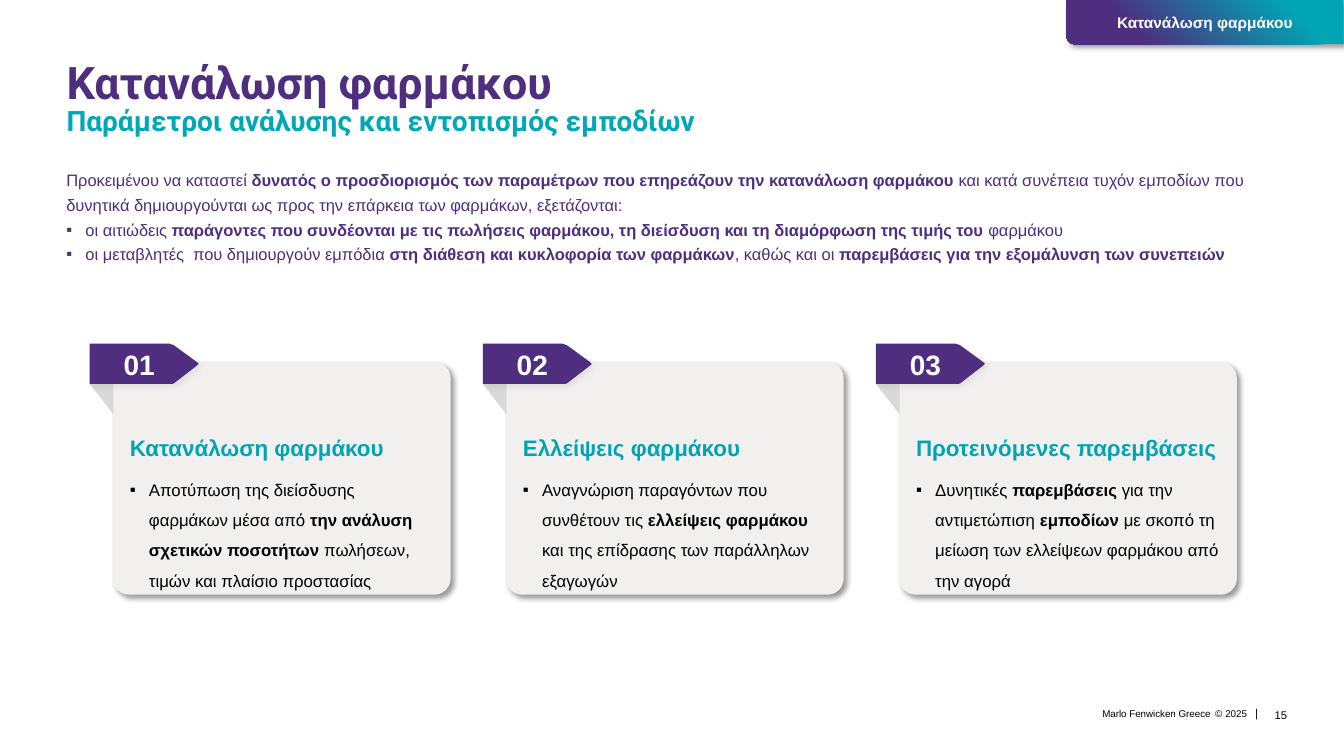
from dataclasses import dataclass
from typing import NamedTuple

from lxml import etree
from pptx import Presentation
from pptx import util as u
from pptx.dml import color
from pptx.enum import shapes, text
from pptx.oxml import ns
from pptx.shapes import autoshape
from pptx.slide import Slide
from pptx.text import text as words

CELL = u.Inches(0.1)
PURPLE, TEAL, WHITE, BLACK = "4F2D7F", "00A4B3", "FFFFFF", "000000"
LEFT, CENTER, RIGHT = text.PP_ALIGN.LEFT, text.PP_ALIGN.CENTER, text.PP_ALIGN.RIGHT
TOP, MIDDLE, BOTTOM = text.MSO_ANCHOR.TOP, text.MSO_ANCHOR.MIDDLE, text.MSO_ANCHOR.BOTTOM

CARD_COLUMN, CARD_ROW, CARD_PITCH = 11.2, 35.9, 39
FLAG_COLUMN, FLAG_ROW = 8.9, 34.1
FLAG = [(0, 0), (7.9, 0), (8.2, 0.1), (8.4, 0.2), (10.6, 1.8), (10.8, 2),
        (10.6, 2.2), (8.4, 3.9), (8.2, 4), (7.9, 4), (0, 4)]
FOLD = [(0, 4), (2.35, 7), (2.35, 2.1)]
TAB = [(0, 0), (27.5, 0), (27.5, 4.4), (0.8, 4.4), (0.4, 4.3), (0.1, 4), (0, 3.6)]


class Run(NamedTuple):
    text: str
    bold: bool = False


@dataclass
class Line:
    runs: list[Run]
    size: float
    color: str
    font: str = "Arial"
    align: text.PP_ALIGN = LEFT
    after: float = 0
    spacing: float = 1.0
    hanging: float = 0
    bullet: str = ""


@dataclass
class Card:
    heading: str
    runs: list[Run]


@dataclass
class FooterPart:
    box: tuple[float, float, float, float]
    line: Line


def footer_line(wording: str, size: float, **options) -> Line:
    return Line([Run(wording)], size, BLACK, align=RIGHT, **options)


CARDS = [
    Card("Κατανάλωση φαρμάκου", [
        Run("Αποτύπωση της διείσδυσης φαρμάκων μέσα από "),
        Run("την ανάλυση σχετικών ποσοτήτων ", True),
        Run("πωλήσεων, τιμών και πλαίσιο προστασίας")]),
    Card("Ελλείψεις φαρμάκου", [
        Run("Αναγνώριση παραγόντων που συνθέτουν τις "),
        Run("ελλείψεις φαρμάκου ", True),
        Run("και της επίδρασης των παράλληλων εξαγωγών")]),
    Card("Προτεινόμενες παρεμβάσεις", [
        Run("Δυνητικές "), Run("παρεμβάσεις ", True),
        Run("για την αντιμετώπιση "), Run("εμποδίων ", True),
        Run("με σκοπό τη μείωση των ελλείψεων φαρμάκου από την αγορά")]),
]
INTRO = [
    ("", [Run("Προκειμένου να καταστεί "),
          Run("δυνατός ο προσδιορισμός των παραμέτρων που επηρεάζουν την κατανάλωση φαρμάκου ", True),
          Run("και κατά συνέπεια τυχόν εμποδίων που")]),
    ("", [Run("δυνητικά δημιουργούνται ως προς την επάρκεια των φαρμάκων, εξετάζονται:")]),
    ("▪", [Run("οι αιτιώδεις "),
           Run("παράγοντες που συνδέονται με τις πωλήσεις φαρμάκου, "
               "τη διείσδυση και τη διαμόρφωση της τιμής του", True),
           Run(" φαρμάκου")]),
    ("▪", [Run("οι μεταβλητές  που δημιουργούν εμπόδια "),
           Run("στη διάθεση και κυκλοφορία των φαρμάκων", True),
           Run(", καθώς και οι "),
           Run("παρεμβάσεις για την εξομάλυνση των συνεπειών", True)]),
]
FOOTER = [
    FooterPart((124.5, 70.1, 0.3, 1.3), footer_line("|", 8)),
    FooterPart((120.8, 70.4, 2.9, 1), footer_line("2025", 7, hanging=1, bullet="©")),
    FooterPart((87.1, 70.5, 33, 0.9), footer_line("Marlo Fenwicken Greece", 7)),
    FooterPart((124.7, 70, 3, 1.6), footer_line("15", 8)),
]


def cells(count: float) -> u.Emu:
    return u.Emu(round(count * CELL))


def rgb(value: str) -> color.RGBColor:
    return color.RGBColor.from_string(value)


def write(frame: words.TextFrame, lines: list[Line], insets: tuple[float, ...],
          anchor: text.MSO_ANCHOR = TOP, wrap: bool = True) -> None:
    frame.auto_size = text.MSO_AUTO_SIZE.NONE
    frame.word_wrap, frame.vertical_anchor = wrap, anchor
    (frame.margin_left, frame.margin_top,
     frame.margin_right, frame.margin_bottom) = map(cells, insets)
    for index, line in enumerate(lines):
        paragraph = frame.add_paragraph() if index else frame.paragraphs[0]
        properties = paragraph._p.get_or_add_pPr()
        if line.hanging:
            properties.set("marL", str(cells(line.hanging)))
            properties.set("indent", str(-cells(line.hanging)))
        if line.bullet:
            etree.SubElement(properties, ns.qn("a:buFont"), typeface="Arial")
            etree.SubElement(properties, ns.qn("a:buChar"), char=line.bullet)
        paragraph.alignment, paragraph.line_spacing = line.align, line.spacing
        paragraph.space_before, paragraph.space_after = u.Pt(0), u.Pt(line.after)
        for part in line.runs:
            run = paragraph.add_run()
            run.text = part.text
            run.font.name, run.font.size, run.font.bold = line.font, u.Pt(line.size), part.bold
            run.font.color.rgb = rgb(line.color)


def paint(shape: autoshape.Shape, fill: str, shadow: int = 0) -> None:
    shape.fill.solid()
    shape.fill.fore_color.rgb = rgb(fill)
    shape.line.fill.background()
    shape.shadow.inherit = False
    if shadow:
        effects = shape._element.spPr.find(ns.qn("a:effectLst"))
        outer = etree.SubElement(effects, ns.qn("a:outerShdw"), blurRad=str(u.Pt(4)),
                                 dist=str(u.Pt(3)), dir="2700000", algn="tl", rotWithShape="0")
        tint = etree.SubElement(outer, ns.qn("a:srgbClr"), val=BLACK)
        etree.SubElement(tint, ns.qn("a:alpha"), val=str(shadow * 1000))


def outline(slide: Slide, column: float, row: float,
            points: list[tuple[float, float]]) -> autoshape.Shape:
    corners = [(cells(column + x), cells(row + y)) for x, y in points]
    builder = slide.shapes.build_freeform(*corners[0])
    builder.add_line_segments(corners[1:], close=True)
    return builder.convert_to_shape()


def draw_title(slide: Slide) -> None:
    title = slide.shapes.title
    title.left, title.top, title.width, title.height = map(cells, (5.6, 5.7, 122, 10.2))
    write(title.text_frame, [
        Line([Run("Κατανάλωση φαρμάκου", True)], 32, PURPLE, "Roboto", spacing=0.85),
        Line([Run("Παράμετροι ανάλυσης και εντοπισμός εμποδίων", True)], 20, "00A7B4",
             "Roboto", spacing=0.85)], (1, 0.5, 1, 0.5))


def draw_tab(slide: Slide) -> None:
    tab = outline(slide, 105.8, 0, TAB)
    paint(tab, PURPLE, 40)
    tab.fill.gradient()
    tab.fill.gradient_angle = 225
    for stop, (position, tone) in zip(tab.fill.gradient_stops, [(0.19, TEAL), (0.76, PURPLE)]):
        stop.position, stop.color.rgb = position, rgb(tone)
    write(tab.text_frame, [Line([Run("Κατανάλωση φαρμάκου", True)], 11, WHITE, align=CENTER)],
          (0.8,) * 4, MIDDLE)


def draw_card(slide: Slide, index: int, card: Card) -> None:
    shift = index * CARD_PITCH
    panel = slide.shapes.add_shape(
        shapes.MSO_SHAPE.ROUNDED_RECTANGLE,
        *map(cells, (CARD_COLUMN + shift, CARD_ROW, 33.5, 23.1)))
    panel.adjustments[0] = 0.07
    paint(panel, "F2F0EE", 40)
    write(panel.text_frame, [
        Line([Run(card.heading, True)], 16, TEAL, after=6),
        Line(card.runs, 12, BLACK, after=3, spacing=1.5, hanging=1.9, bullet="▪"),
    ], (1.2, 6.7, 1.2, 1.2))
    paint(outline(slide, FLAG_COLUMN + shift, FLAG_ROW, FOLD), "D9D9D9")
    flag = outline(slide, FLAG_COLUMN + shift, FLAG_ROW, FLAG)
    paint(flag, PURPLE, 5)
    write(flag.text_frame, [Line([Run(f"{index + 1:02}", True)], 20, WHITE, align=CENTER)],
          (0, 0.5, 1, 0.5), MIDDLE)


def main() -> None:
    """Build the slide on medicine consumption and save it."""
    presentation = Presentation()
    presentation.slide_width, presentation.slide_height = cells(133.33), cells(75)
    slide = presentation.slides.add_slide(presentation.slide_layouts[5])
    for part in FOOTER:
        box = slide.shapes.add_textbox(*map(cells, part.box))
        write(box.text_frame, [part.line], (0,) * 4, BOTTOM, wrap=False)
    draw_tab(slide)
    for index, card in enumerate(CARDS):
        draw_card(slide, index, card)
    intro = slide.shapes.add_textbox(*map(cells, (5.6, 16.1, 119.7, 10.2)))
    write(intro.text_frame, [Line(runs, 11.8, PURPLE, after=3.6, hanging=1.9, bullet=bullet)
                             for bullet, runs in INTRO], (1, 0.75, 1, 0.5))
    draw_title(slide)
    presentation.save("out.pptx")


if __name__ == "__main__":
    main()
